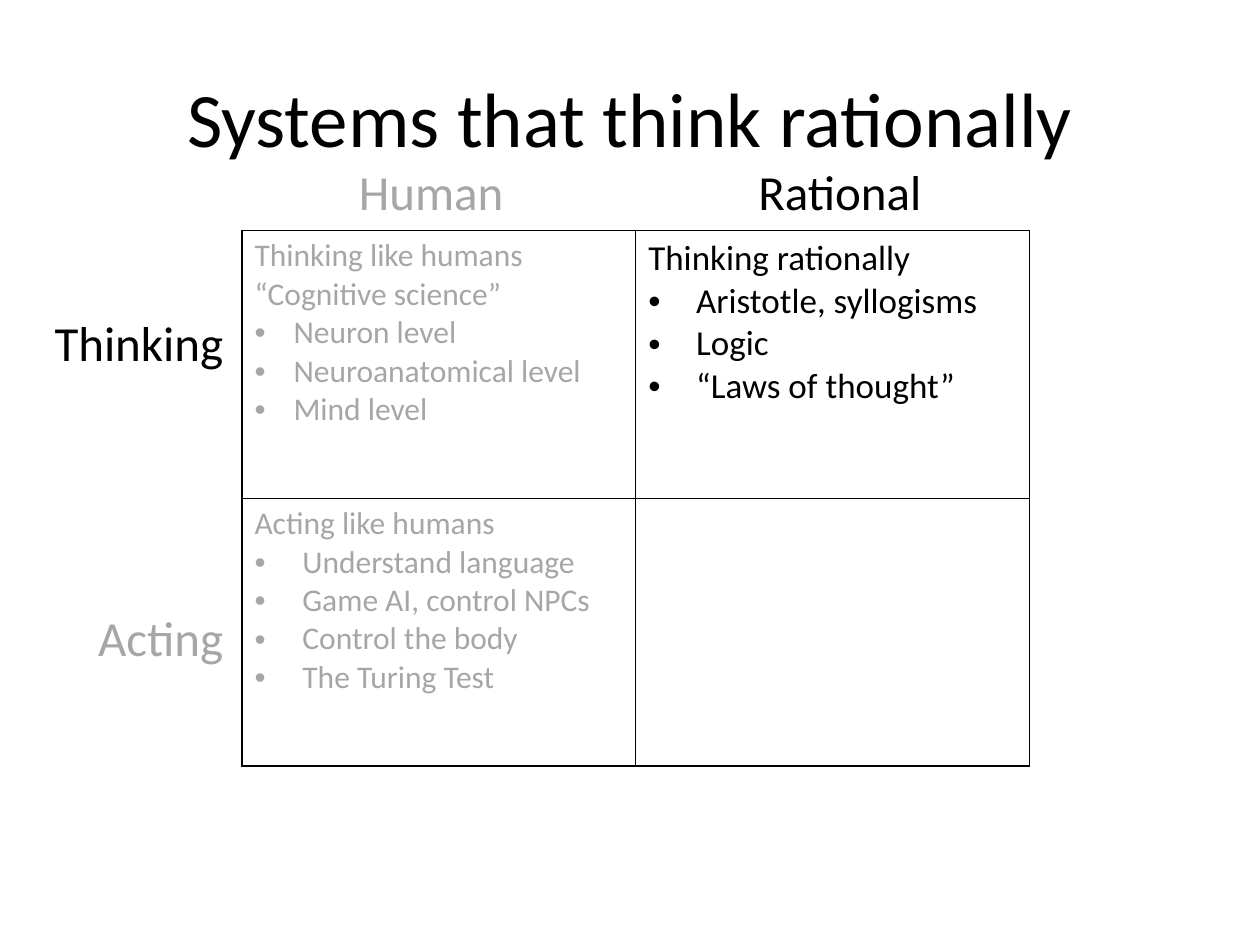
from lxml.etree import SubElement
from pptx import Presentation
from pptx.dml.color import RGBColor
from pptx.enum.text import MSO_ANCHOR, PP_ALIGN
from pptx.oxml import parse_xml
from pptx.oxml.ns import nsdecls, qn
from pptx.util import Inches, Pt

BLACK = "000000"
GRAY = "A6A6A6"


def add_text(paragraph, text, size, color):
    run = paragraph.add_run()
    run.text = text
    run.font.name = "Calibri"
    run.font.size = Pt(size)
    run.font.color.rgb = RGBColor.from_string(color)


presentation = Presentation()
presentation.slide_width = Inches(10)
presentation.slide_height = Inches(7.5)
slide = presentation.slides.add_slide(presentation.slide_layouts[6])

labels = [
    ("Systems that think rationally", 0.5, 0.3, 9, 1.25, 44, BLACK, PP_ALIGN.CENTER),
    ("Human", 2.75, 1.23, 1.6, 0.57, 28, GRAY, PP_ALIGN.LEFT),
    ("Rational", 5.92, 1.23, 1.6, 0.57, 28, BLACK, PP_ALIGN.LEFT),
    ("Thinking", 0.27, 2.43, 1.6, 0.57, 28, BLACK, PP_ALIGN.RIGHT),
    ("Acting", 0.27, 4.77, 1.6, 0.57, 28, GRAY, PP_ALIGN.RIGHT),
]
for text, left, top, width, height, size, color, alignment in labels:
    label = slide.shapes.add_textbox(Inches(left), Inches(top), Inches(width), Inches(height))
    label.text_frame.word_wrap = True
    label.text_frame.vertical_anchor = MSO_ANCHOR.MIDDLE
    paragraph = label.text_frame.paragraphs[0]
    paragraph.alignment = alignment
    add_text(paragraph, text, size, color)

table = slide.shapes.add_table(
    2, 2, Inches(1.92), Inches(1.83), Inches(6.25), Inches(4.25)
).table
table.first_row = False
table.horz_banding = False

for cell in table.iter_cells():
    cell.fill.background()
    properties = cell._tc.get_or_add_tcPr()
    for position, side in enumerate(["lnL", "lnR", "lnT", "lnB"]):
        border = parse_xml(
            f'<a:{side} {nsdecls("a")} w="{Pt(1)}"><a:solidFill>'
            f'<a:srgbClr val="{BLACK}"/></a:solidFill></a:{side}>'
        )
        properties.insert(position, border)

quadrants = [
    (0, 0, 18, GRAY, 0.31, ["Thinking like humans", "“Cognitive science”"],
     ["Neuron level", "Neuroanatomical level", "Mind level"]),
    (0, 1, 20, BLACK, 0.38, ["Thinking rationally"],
     ["Aristotle, syllogisms", "Logic", "“Laws of thought”"]),
    (1, 0, 18, GRAY, 0.38, ["Acting like humans"],
     ["Understand language", "Game AI, control NPCs", "Control the body", "The Turing Test"]),
]
for row, column, size, color, indent, headings, bullets in quadrants:
    text_frame = table.cell(row, column).text_frame
    for index, text in enumerate(headings + bullets):
        paragraph = text_frame.add_paragraph() if index else text_frame.paragraphs[0]
        add_text(paragraph, text, size, color)
        if index >= len(headings):
            properties = paragraph._p.get_or_add_pPr()
            properties.set("marL", str(Inches(indent)))
            properties.set("indent", str(-Inches(indent)))
            SubElement(properties, qn("a:buFont"), typeface="Arial")
            SubElement(properties, qn("a:buChar"), char="•")

presentation.save("out.pptx")
